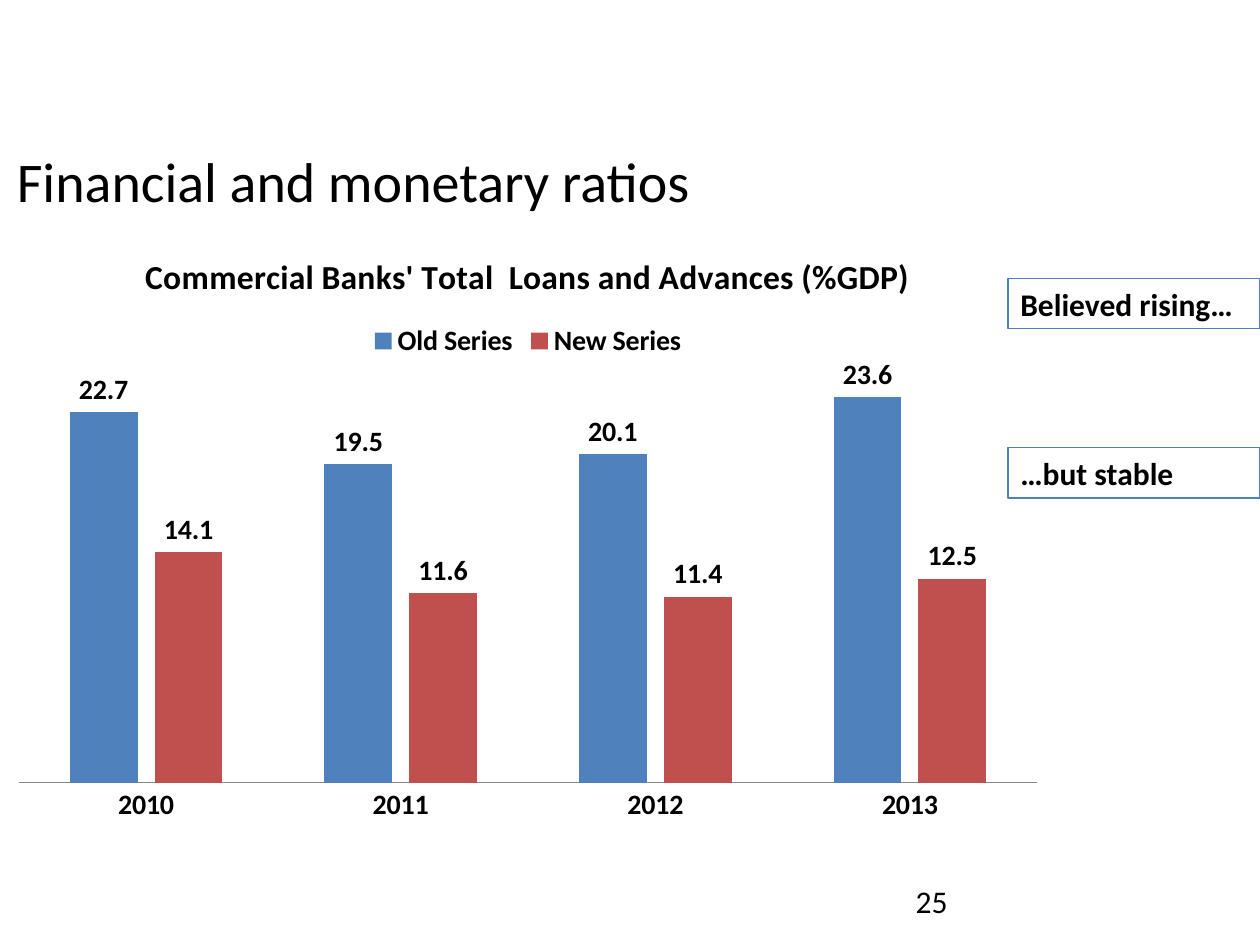
from lxml import etree
from pptx import Presentation
from pptx.chart.data import CategoryChartData
from pptx.dml.color import RGBColor
from pptx.enum.chart import XL_CHART_TYPE, XL_LABEL_POSITION, XL_LEGEND_POSITION, XL_TICK_MARK
from pptx.enum.shapes import MSO_SHAPE
from pptx.enum.text import MSO_ANCHOR, PP_ALIGN
from pptx.oxml.ns import qn
from pptx.util import Cm, Pt


def rgb(value):
    return RGBColor.from_string(value)


def write(shape, text, size, bold=False, align=PP_ALIGN.LEFT):
    tf = shape.text_frame
    tf.word_wrap = True
    tf.vertical_anchor = MSO_ANCHOR.MIDDLE
    p = tf.paragraphs[0]
    p.alignment = align
    r = p.add_run()
    r.text = text
    for name, value in {"name": "Calibri", "size": Pt(size), "bold": bold}.items():
        setattr(r.font, name, value)
    r.font.color.rgb = rgb("000000")


prs = Presentation()
prs.slide_width, prs.slide_height = Cm(25.4), Cm(19.05)
s = prs.slides.add_slide(prs.slide_layouts[5])

# Title
title = s.shapes.title
place = {"left": Cm(0), "top": Cm(2.69), "width": Cm(14.17), "height": Cm(1.9)}
for name, value in place.items():
    setattr(title, name, value)
write(title, "Financial and monetary ratios", 32, align=PP_ALIGN.RIGHT)

# Chart
data = CategoryChartData(number_format="0.0")
data.categories = ["2010", "2011", "2012", "2013"]
data.add_series("Old Series", [22.7, 19.5, 20.1, 23.6])
data.add_series("New Series", [14.1, 11.6, 11.4, 12.5])
chart = s.shapes.add_chart(XL_CHART_TYPE.COLUMN_CLUSTERED, Cm(-0.05), Cm(4.6),
                           Cm(21.39), Cm(12.29), data).chart
tf = chart.chart_title.text_frame
tf.text = "Commercial Banks' Total  Loans and Advances (%GDP)"
for font, size in ((chart.font, 16), (tf.paragraphs[0].runs[0].font, 19.2)):
    for name, value in {"name": "Calibri", "size": Pt(size), "bold": True}.items():
        setattr(font, name, value)
    font.color.rgb = rgb("000000")

chart.has_legend = True
chart.legend.position = XL_LEGEND_POSITION.TOP
chart.legend.include_in_layout = False

value_axis = chart.value_axis
for name, value in {"minimum_scale": 0, "maximum_scale": 25,
                    "has_major_gridlines": False, "visible": False}.items():
    setattr(value_axis, name, value)
chart.category_axis.major_tick_mark = XL_TICK_MARK.NONE
chart.category_axis.format.line.color.rgb = rgb("868686")

plot = chart.plots[0]
for name, value in {"gap_width": 150, "overlap": -25, "vary_by_categories": False,
                    "has_data_labels": True}.items():
    setattr(plot, name, value)
for name, value in {"show_value": True, "number_format": "0.0",
                    "number_format_is_linked": False,
                    "position": XL_LABEL_POSITION.OUTSIDE_END}.items():
    setattr(plot.data_labels, name, value)
for series, color in zip(plot.series, ("4F81BD", "C0504D")):
    series.format.fill.solid()
    series.format.fill.fore_color.rgb = rgb(color)

# Fixed inner plot area, as fractions of the chart
plot_area = chart.element.chart.plotArea
for old in plot_area.findall(qn("c:layout")):
    plot_area.remove(old)
layout = etree.Element(qn("c:layout"))
plot_area.insert(0, layout)
manual = etree.SubElement(layout, qn("c:manualLayout"))
for tag, value in (("layoutTarget", "inner"), ("xMode", "edge"), ("yMode", "edge"),
                   ("x", 0.02), ("y", 0.24), ("w", 0.96), ("h", 0.67)):
    etree.SubElement(manual, qn("c:" + tag)).set("val", str(value))

# Remarks
for text, top in (("Believed rising…", 5.61), ("…but stable", 9.02)):
    sp = s.shapes.add_shape(MSO_SHAPE.RECTANGLE, Cm(20.32), Cm(top), Cm(5.08), Cm(1.02))
    sp.shadow.inherit = False
    sp.fill.background()
    sp.line.color.rgb = rgb("4F81BD")
    sp.line.width = Pt(0.75)
    write(sp, text, 18, bold=True)

# Page number
write(s.shapes.add_textbox(Cm(18.21), Cm(17.65), Cm(5.92), Cm(1.02)), "25", 18)

prs.save("out.pptx")
